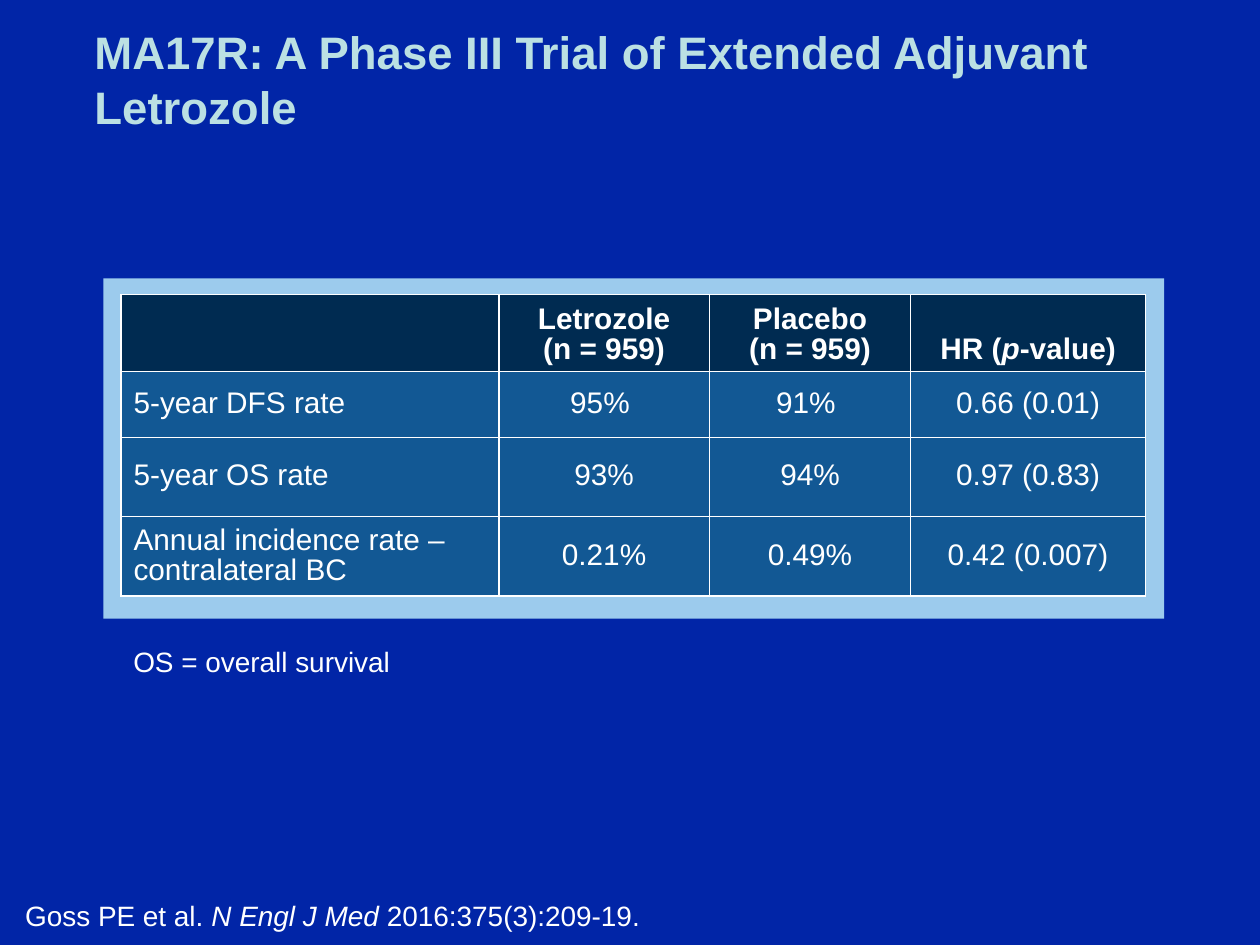
import pptx
import pptx.util
import pptx.dml.color
import pptx.enum.shapes
import pptx.enum.text
import pptx.oxml
import pptx.oxml.ns

Inches, Pt = pptx.util.Inches, pptx.util.Pt
ALIGN, ANCHOR = pptx.enum.text.PP_ALIGN, pptx.enum.text.MSO_ANCHOR
COLORS = {name: pptx.dml.color.RGBColor.from_string(value) for name, value in {
    "background": "0125A7", "title": "BBE0E3", "text": "FFFFFF",
    "frame": "9CCBED", "header": "002B51", "body": "125894"}.items()}

deck = pptx.Presentation()
deck.slide_width, deck.slide_height = Inches(10), Inches(7.5)
page = deck.slides.add_slide(deck.slide_layouts[6])
page.background.fill.solid()
page.background.fill.fore_color.rgb = COLORS["background"]


def write(frame, text, size, color="text", bold=False, align=ALIGN.LEFT, spacing=None):
    """Fill a text frame, one paragraph per line; parts between asterisks are italic."""
    frame.word_wrap = True
    for index, line in enumerate(text.split("\n")):
        para = frame.paragraphs[0] if index == 0 else frame.add_paragraph()
        para.alignment, para.line_spacing = align, spacing
        para.font.name, para.font.size, para.font.bold = "Arial", Pt(size), bold
        para.font.color.rgb = COLORS[color]
        for part, words in enumerate(line.split("*")):
            if words:
                span = para.add_run()
                span.text = words
                if part % 2:
                    span.font.italic = True


def add_text(place, text, size, margins, anchor, **style):
    box = page.shapes.add_textbox(*map(Inches, place))
    frame = box.text_frame
    frame.margin_left, frame.margin_top, frame.margin_right, frame.margin_bottom = map(Inches, margins)
    frame.vertical_anchor = anchor
    write(frame, text, size, **style)


add_text((0, 6.81, 10, 0.69), "Goss PE et al. *N Engl J Med *2016:375(3):209-19.", 16,
         (0.2, 0.05, 0.1, 0.1), ANCHOR.BOTTOM)
add_text((0.75, 0, 8.5, 1.25), "MA17R: A Phase III Trial of Extended Adjuvant Letrozole", 26,
         (0, 0, 0, 0), ANCHOR.MIDDLE, color="title", bold=True)

# Results table on its pale frame
frame_box = page.shapes.add_shape(pptx.enum.shapes.MSO_SHAPE.RECTANGLE,
                                  *map(Inches, (0.82, 2.21, 8.42, 2.7)))
frame_box.shadow.inherit = False
frame_box.fill.solid()
frame_box.fill.fore_color.rgb = COLORS["frame"]
frame_box.line.fill.background()

results = [
    ["", "Letrozole\n(n = 959)", "Placebo\n(n = 959)", "HR (*p*-value)"],
    ["5-year DFS rate", "95% ", "91% ", "0.66 (0.01)"],
    ["5-year OS rate", "93%", "94%", "0.97 (0.83)"],
    ["Annual incidence rate –contralateral BC", "0.21%", "0.49%", "0.42 (0.007)"],
]
column_widths = [3, 1.67, 1.6, 1.86]
row_heights = [0.59, 0.52, 0.63, 0.63]
table = page.shapes.add_table(len(results), len(column_widths), Inches(0.96), Inches(2.34),
                              Inches(sum(column_widths)), Inches(sum(row_heights))).table
for column, width in zip(table.columns, column_widths):
    column.width = Inches(width)
for row, height in zip(table.rows, row_heights):
    row.height = Inches(height)

for r, values in enumerate(results):
    for c, value in enumerate(values):
        header = r == 0
        cell = table.cell(r, c)
        cell.vertical_anchor = ANCHOR.BOTTOM if header else ANCHOR.MIDDLE
        write(cell.text_frame, value, 17, bold=header, spacing=0.9,
              align=ALIGN.CENTER if c else ALIGN.LEFT)
        properties = cell._tc.get_or_add_tcPr()
        for side in ("lnL", "lnR", "lnT", "lnB"):
            properties.append(pptx.oxml.parse_xml(
                f'<a:{side} {pptx.oxml.ns.nsdecls("a")} w="{Pt(0.75)}"><a:solidFill>'
                f'<a:srgbClr val="{COLORS["text"]}"/></a:solidFill></a:{side}>'))
        cell.fill.solid()
        cell.fill.fore_color.rgb = COLORS["header" if header else "body"]

add_text((0.96, 5.07, 5.53, 0.37), "OS = overall survival", 16,
         (0.1, 0.05, 0.1, 0.05), ANCHOR.TOP)

deck.save("out.pptx")
